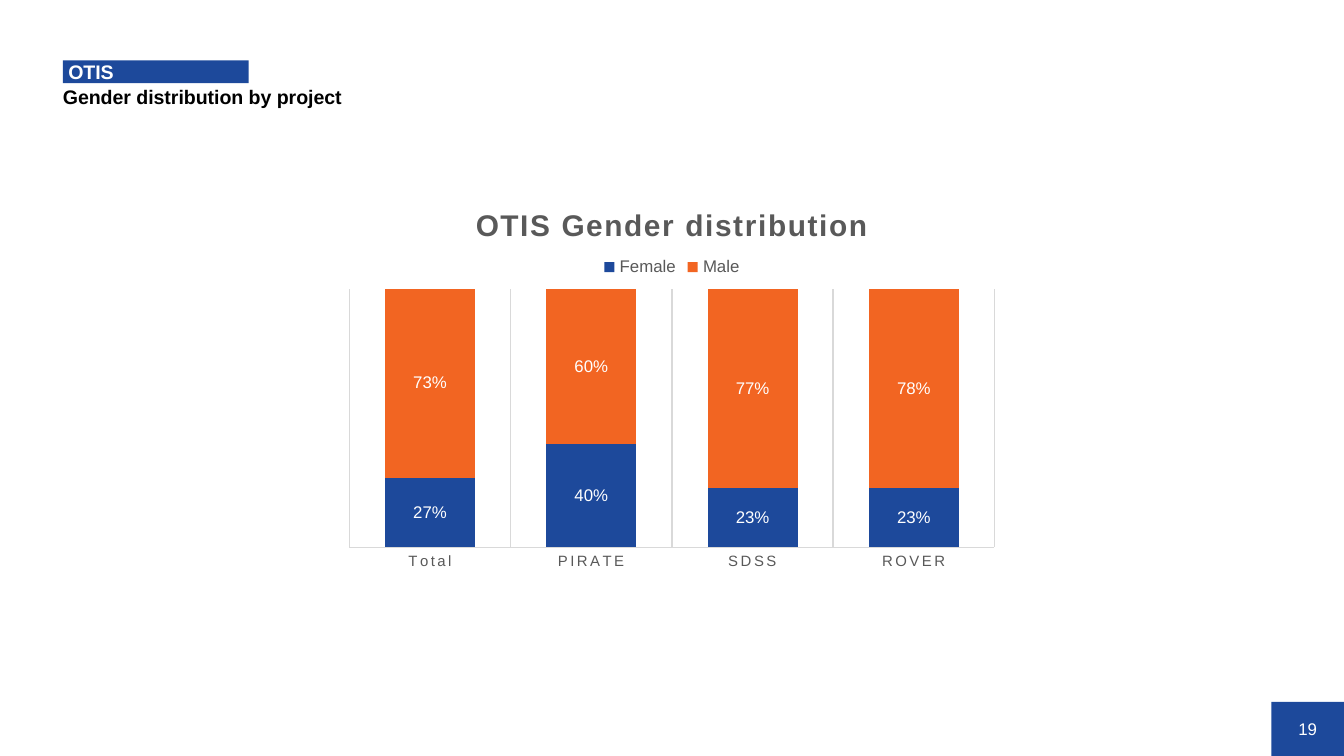
from dataclasses import dataclass

from lxml import etree
from pptx import Presentation
from pptx.chart.data import CategoryChartData
from pptx.dml.color import RGBColor
from pptx.enum import chart as ch, shapes, text
from pptx.oxml import ns
from pptx.util import Cm, Pt

# Content
HEADING = "OTIS"
SUBHEADING = "Gender distribution by project"
PAGE_NUMBER = "19"
CHART_TITLE = "OTIS Gender distribution"
PROJECTS = ["Total", "PIRATE", "SDSS", "ROVER"]
SHARES = {
    "Female": [0.27, 0.40, 0.23, 0.23],
    "Male": [0.73, 0.60, 0.77, 0.78],
}


@dataclass(frozen=True)
class Theme:
    font: str = "Arial"
    blue: str = "1D499B"
    orange: str = "F26522"
    white: str = "FFFFFF"
    black: str = "000000"
    grey: str = "595959"
    rule: str = "D9D9D9"
    heading: float = 10.5
    chart_title: float = 16
    small: float = 9
    axis: float = 8


THEME = Theme()
SLIDE_W, SLIDE_H = 25.4, 14.28


def rgb(value):
    return RGBColor.from_string(value)


def style(font, size, color, bold=False, spacing=None):
    font.name, font.size, font.bold = THEME.font, Pt(size), bold
    font.color.rgb = rgb(color)
    if spacing:
        font._element.set("spc", str(spacing))


def write(frame, words, *, size, color, bold=False, line=None,
          align=text.PP_ALIGN.LEFT, inset=(0, 0)):
    frame.word_wrap = True
    frame.auto_size = text.MSO_AUTO_SIZE.NONE
    frame.vertical_anchor = text.MSO_ANCHOR.MIDDLE
    frame.margin_left, frame.margin_top = Cm(inset[0]), Cm(inset[1])
    frame.margin_right = frame.margin_bottom = 0
    paragraph = frame.paragraphs[0]
    paragraph.alignment, paragraph.line_spacing = align, line
    run = paragraph.add_run()
    run.text = words
    style(run.font, size, color, bold)


def place(element, index, **fractions):
    """Give a chart part a fixed place, as fractions of the chart."""
    layout = element.find(ns.qn("c:layout"))
    if layout is None:
        layout = etree.Element(ns.qn("c:layout"))
        element.insert(index, layout)
    manual = etree.SubElement(layout, ns.qn("c:manualLayout"))
    if element.tag == ns.qn("c:plotArea"):
        etree.SubElement(manual, ns.qn("c:layoutTarget")).set("val", "inner")
    for mode in ("xMode", "yMode"):
        etree.SubElement(manual, ns.qn(f"c:{mode}")).set("val", "edge")
    for key, value in fractions.items():
        etree.SubElement(manual, ns.qn(f"c:{key}")).set("val", str(value))


def add_gender_chart(slide):
    data = CategoryChartData(number_format="0%")
    data.categories = PROJECTS
    for group, values in SHARES.items():
        data.add_series(group, values)
    chart = slide.shapes.add_chart(
        ch.XL_CHART_TYPE.COLUMN_STACKED_100,
        Cm(6.35), Cm(3.33), Cm(12.7), Cm(7.62), data).chart
    style(chart.font, 10, THEME.black)

    # Title and legend
    chart.has_title = True
    title = chart.chart_title
    run = title.text_frame.paragraphs[0].add_run()
    run.text = CHART_TITLE
    style(run.font, THEME.chart_title, THEME.grey, bold=True, spacing=100)
    place(title._element, 1, x=0.2, y=0.06)
    chart.has_legend = True
    chart.legend.position = ch.XL_LEGEND_POSITION.TOP
    chart.legend.include_in_layout = False
    style(chart.legend.font, THEME.small, THEME.grey)

    # Axes
    projects, shares = chart.category_axis, chart.value_axis
    projects.major_tick_mark = ch.XL_TICK_MARK.NONE
    projects.has_major_gridlines = True
    for line in (projects.format.line, projects.major_gridlines.format.line):
        line.color.rgb, line.width = rgb(THEME.rule), Pt(0.75)
    style(projects.tick_labels.font, THEME.axis, THEME.grey, spacing=120)
    shares.has_major_gridlines = False
    shares.visible = False

    # Columns
    plot = chart.plots[0]
    plot.gap_width, plot.overlap, plot.vary_by_categories = 79, 100, False
    for series, color in zip(plot.series, (THEME.blue, THEME.orange)):
        series.format.fill.solid()
        series.format.fill.fore_color.rgb = rgb(color)
        labels = series.data_labels
        labels.show_value = True
        labels.number_format, labels.number_format_is_linked = "0%", False
        labels.position = ch.XL_LABEL_POSITION.CENTER
        style(labels.font, THEME.small, THEME.white)
    plot_area = chart._chartSpace.chart.plotArea
    place(plot_area, 0, x=0.02, y=0.28, w=0.96, h=0.64)
    place(chart.legend._element, 1, x=0.39, y=0.2, w=0.22, h=0.05)


def main():
    deck = Presentation()
    deck.slide_width, deck.slide_height = Cm(SLIDE_W), Cm(SLIDE_H)
    slide = deck.slides.add_slide(deck.slide_layouts[5])

    # Page number in the bottom right corner
    width, height = 1.37, 1.02 * SLIDE_W / 25.4
    page = slide.shapes.add_shape(
        shapes.MSO_SHAPE.RECTANGLE, Cm(SLIDE_W - width),
        Cm(SLIDE_H - height), Cm(width), Cm(height))
    page.shadow.inherit = False
    page.fill.solid()
    page.fill.fore_color.rgb = rgb(THEME.blue)
    page.line.fill.background()
    write(page.text_frame, PAGE_NUMBER, size=THEME.small, color=THEME.white,
          align=text.PP_ALIGN.CENTER)

    # Heading bar and subheading
    heading = dict(size=THEME.heading, bold=True, line=0.9, inset=(0.1, 0.05))
    subheading = slide.shapes.add_textbox(Cm(1.09), Cm(1.57), Cm(20.6), Cm(0.53))
    write(subheading.text_frame, SUBHEADING, color=THEME.black, **heading)
    bar = slide.shapes.title
    bar.left, bar.top, bar.width, bar.height = Cm(1.19), Cm(1.14), Cm(3.51), Cm(0.43)
    bar.fill.solid()
    bar.fill.fore_color.rgb = rgb(THEME.blue)
    write(bar.text_frame, HEADING, color=THEME.white, **heading)

    add_gender_chart(slide)
    deck.save("out.pptx")


if __name__ == "__main__":
    main()
